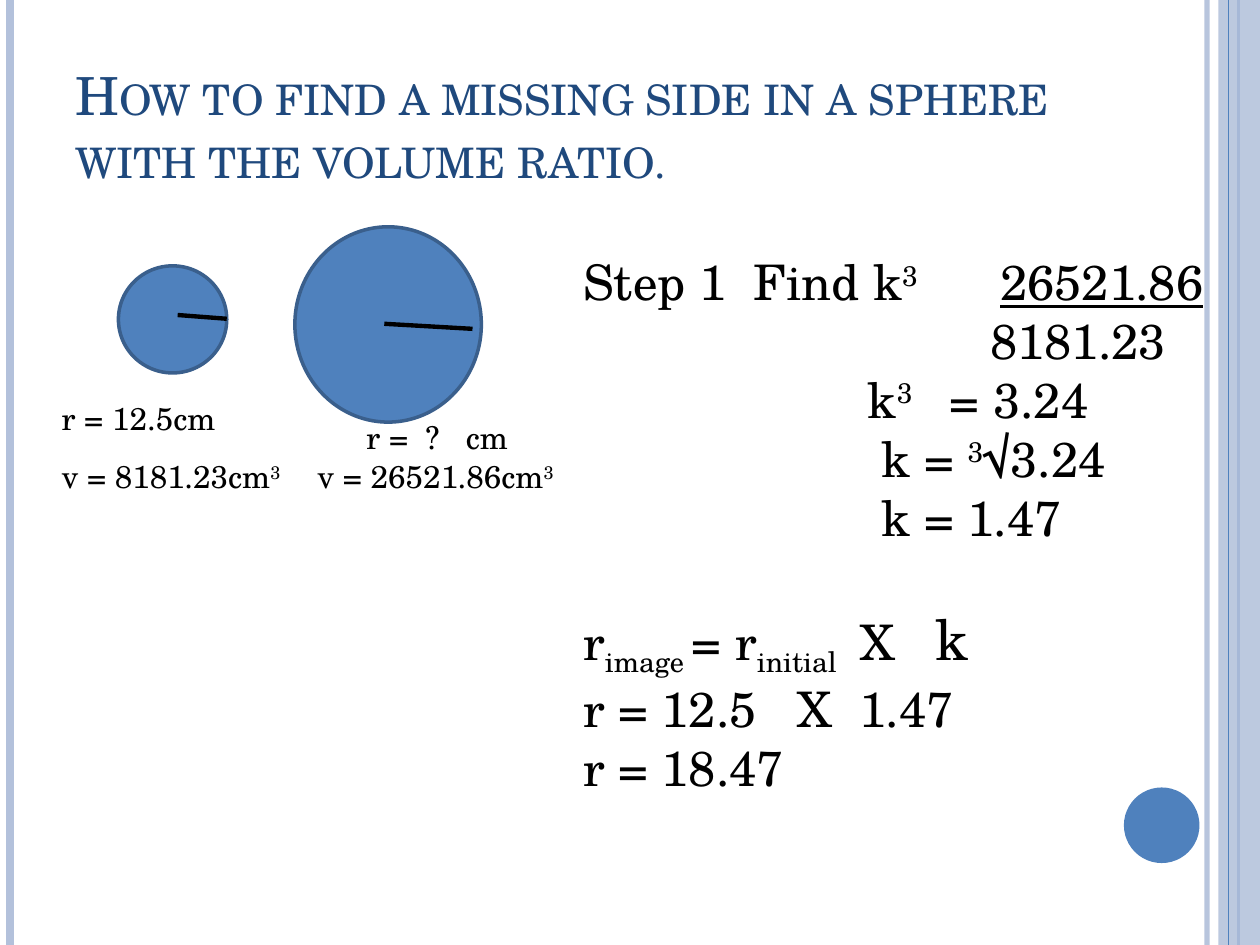
from lxml import etree
from pptx import Presentation
from pptx.dml.color import RGBColor
from pptx.enum import shapes, text
from pptx.oxml.ns import qn
from pptx.util import Inches, Pt

FONT = "TeX Gyre Schola"
BLUE = RGBColor(0x4F, 0x81, 0xBD)
OUTLINE = RGBColor(0x3A, 0x5F, 0x8C)
PALE = RGBColor(0xB3, 0xC1, 0xDB)
NAVY = RGBColor(0x1F, 0x49, 0x7D)
BLACK = RGBColor(0, 0, 0)
SUPER, SUB = 30, -25


def set_opacity(shape, percent):
    color = shape._element.spPr.find(".//" + qn("a:srgbClr"))
    etree.SubElement(color, qn("a:alpha"), val=str(percent * 1000))


def add_line(slide, start, end, color, width):
    points = [Inches(value) for value in (*start, *end)]
    line = slide.shapes.add_connector(shapes.MSO_CONNECTOR.STRAIGHT, *points)
    line.line.color.rgb = color
    line.line.width = Pt(width)
    etree.SubElement(line._element.spPr, qn("a:effectLst"))
    return line


def add_filled(slide, kind, box, fill, outline=None):
    shape = slide.shapes.add_shape(kind, *[Inches(value) for value in box])
    shape.shadow.inherit = False
    shape.fill.solid()
    shape.fill.fore_color.rgb = fill
    if outline is None:
        shape.line.fill.background()
    else:
        shape.line.color.rgb = outline
        shape.line.width = Pt(2)
    return shape


def add_text_box(slide, box):
    frame = slide.shapes.add_textbox(*[Inches(value) for value in box]).text_frame
    frame.word_wrap = True
    return frame


def write(paragraph, runs, size, color=BLACK):
    """Fill a paragraph from (text, baseline percent) pairs."""
    paragraph.font.name = FONT
    paragraph.font.size = Pt(size)
    paragraph.font.color.rgb = color
    for content, baseline in runs:
        run = paragraph.add_run()
        run.text = content
        if baseline:
            run._r.get_or_add_rPr().set("baseline", str(baseline * 1000))


def add_borders(slide, width, height):
    def vertical(x, color, weight):
        return add_line(slide, (x, 0), (x, height), color, weight)

    set_opacity(vertical(width - 0.42, PALE, 3), 93)
    vertical(0.08, PALE, 4.5)
    vertical(width - 0.17, BLUE, 1.5)
    band = add_filled(slide, shapes.MSO_SHAPE.RECTANGLE,
                      (width - 0.33, 0, 0.33, height), PALE)
    set_opacity(band, 87)
    vertical(width - 0.25, BLUE, 0.75)
    add_filled(slide, shapes.MSO_SHAPE.OVAL,
               (width - 1.08, height - 1.25, 0.6, 0.6), BLUE)


def add_title(slide, box):
    frame = add_text_box(slide, box)
    frame.vertical_anchor = text.MSO_ANCHOR.BOTTOM
    paragraph = frame.paragraphs[0]
    title = "How to find a missing side in a sphere with the volume ratio."
    write(paragraph, [(title, 0)], 30, NAVY)
    paragraph.runs[0]._r.get_or_add_rPr().set("cap", "small")


def add_spheres(slide, left, top):
    for x, y, width, height in ((1.95, 0, 1.48, 1.55), (0.55, 0.31, 0.86, 0.85)):
        add_filled(slide, shapes.MSO_SHAPE.OVAL,
                   (left + x, top + y, width, height), BLUE, OUTLINE)
    for x1, y1, x2, y2 in ((1.41, 0.73, 1.02, 0.7), (3.36, 0.81, 2.66, 0.77)):
        add_line(slide, (left + x1, top + y1), (left + x2, top + y2), BLACK, 2.5)
    labels = (
        (0, 1.32, 1.8, [("r = 12.5cm", 0)]),
        (0, 1.78, 2.34, [("v = 8181.23cm", 0), ("3", SUPER)]),
        (2.42, 1.47, 1.8, [("r =  ?   cm", 0)]),
        (2.03, 1.78, 2.34, [("v = 26521.86cm", 0), ("3", SUPER)]),
    )
    for x, y, width, runs in labels:
        frame = add_text_box(slide, (left + x, top + y, width, 0.4))
        write(frame.paragraphs[0], runs, 18)


def add_working(slide, box):
    """Each line of working is its left indent in inches and its runs."""
    lines = (
        (0, [("Step 1  Find k", 0), ("3", SUPER), ("\t", 0), ("26521.86", 0)]),
        (3.23, [("8181.23", 0)]),
        (2.26, [("k", 0), ("3   ", SUPER), (" = 3.24", 0)]),
        (2.37, [("k = ", 0), ("3", SUPER), ("√3.24", 0)]),
        (2.37, [("k = 1.47", 0)]),
        (0, [("r", 0), ("image ", SUB), ("= r", 0), ("initial   ", SUB),
             ("X   ", 0), ("k", 0)]),
        (0, [("r = 12.5   X  1.47", 0)]),
        (0, [("r = 18.47", 0)]),
    )
    frame = add_text_box(slide, box)
    paragraphs = [frame.paragraphs[0]] + [frame.add_paragraph() for _ in lines[1:]]
    for paragraph, (indent, runs) in zip(paragraphs, lines):
        write(paragraph, runs, 28)
        if indent:
            paragraph._p.get_or_add_pPr().set("marL", str(Inches(indent)))

    ratio, radius = paragraphs[0], paragraphs[5]
    ratio.runs[-1].font.underline = True
    tabs = etree.Element(qn("a:tabLst"))
    etree.SubElement(tabs, qn("a:tab"), pos=str(Inches(3.31)), algn="l")
    ratio._p.pPr.find(qn("a:defRPr")).addprevious(tabs)
    radius.space_before = Pt(33.5)
    radius.runs[-1].font.size = Pt(32)


def main():
    presentation = Presentation()
    presentation.slide_width = Inches(10)
    presentation.slide_height = Inches(7.5)
    slide = presentation.slides.add_slide(presentation.slide_layouts[6])
    add_borders(slide, 10, 7.5)
    add_title(slide, (0.5, 0.3, 8.17, 1.25))
    add_spheres(slide, 0.39, 1.8)
    add_working(slide, (4.53, 1.95, 6.48, 4.71))
    presentation.save("out.pptx")


if __name__ == "__main__":
    main()
